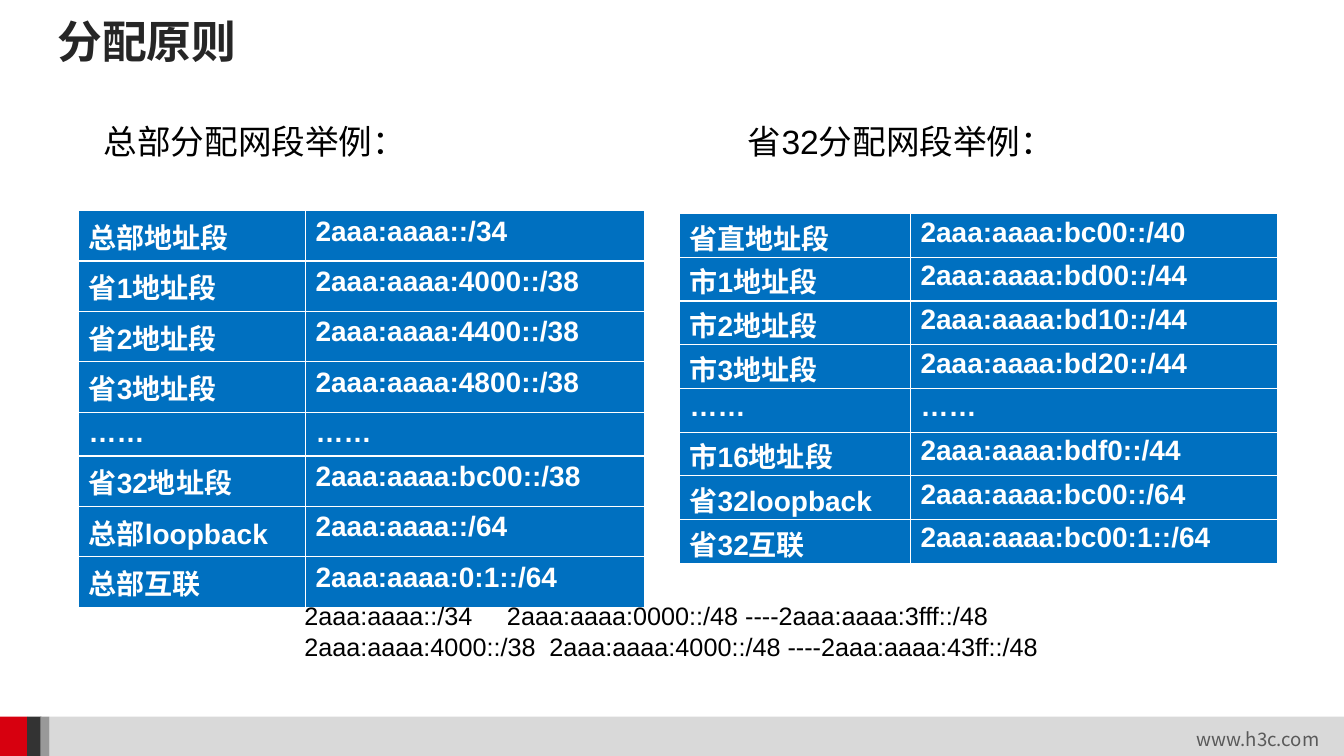
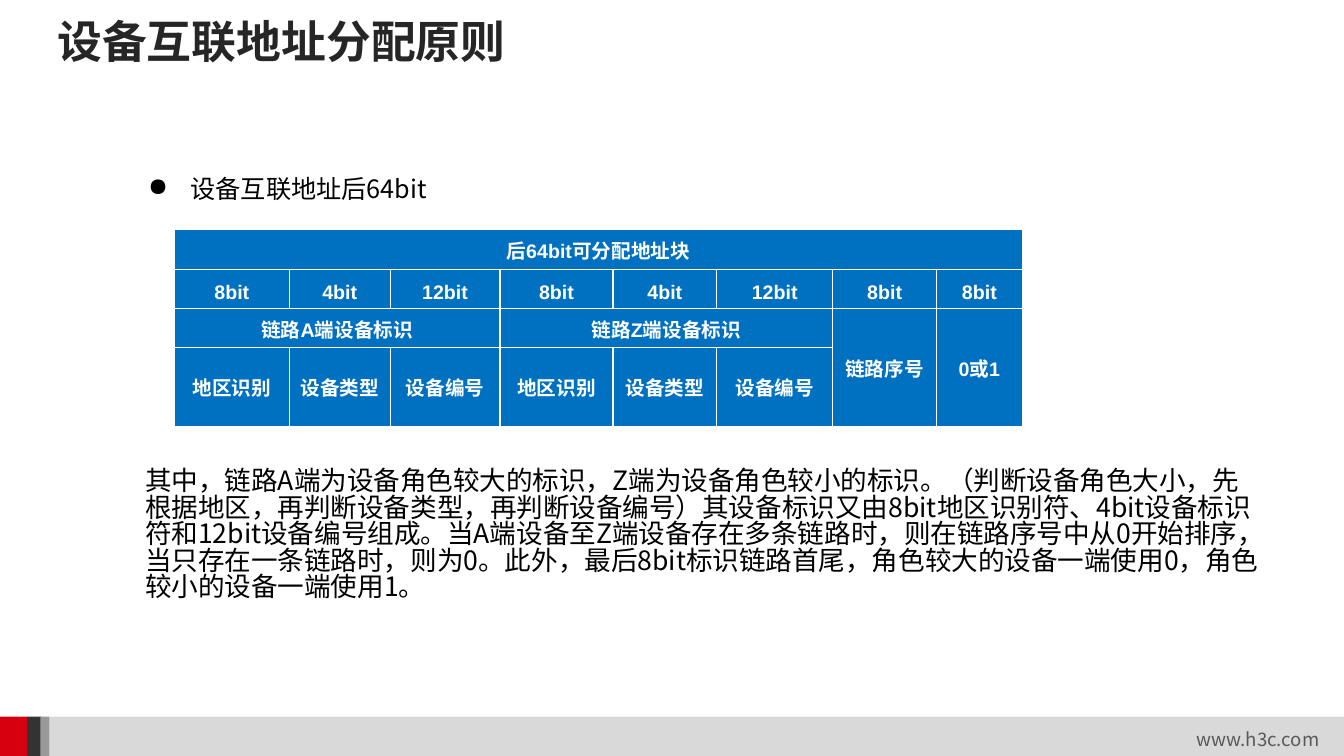
from dataclasses import dataclass

from lxml import etree
from pptx import Presentation
from pptx.dml.color import RGBColor
from pptx.enum import shapes, text
from pptx.oxml import ns
from pptx.util import Inches, Pt


@dataclass(frozen=True)
class Theme:
    latin: str = "Arial"
    cjk: str = "Noto Sans CJK SC"
    ink: str = "000000"
    heading: str = "262626"
    white: str = "FFFFFF"
    table: str = "0070C0"
    footer: str = "595959"
    title_size: float = 32
    subtitle_size: float = 24
    address_size: float = 20
    body_size: float = 19
    note_size: float = 18
    bits_size: float = 14
    footer_size: float = 13.3


THEME = Theme()
FOOTER_BANDS = [
    (0.49, 12.84, "D9D9D9"),
    (0, 0.27, "D7000F"),
    (0.27, 0.14, "333333"),
    (0.4, 0.09, "999999"),
]
HEADQUARTERS = [
    ("总部地址段", "2aaa:aaaa::/34"),
    ("省1地址段", "2aaa:aaaa:4000::/38"),
    ("省2地址段", "2aaa:aaaa:4400::/38"),
    ("省3地址段", "2aaa:aaaa:4800::/38"),
    ("……", "……"),
    ("省32地址段", "2aaa:aaaa:bc00::/38"),
    ("总部loopback", "2aaa:aaaa::/64"),
    ("总部互联", "2aaa:aaaa:0:1::/64"),
]
PROVINCE = [
    ("省直地址段", "2aaa:aaaa:bc00::/40"),
    ("市1地址段", "2aaa:aaaa:bd00::/44"),
    ("市2地址段", "2aaa:aaaa:bd10::/44"),
    ("市3地址段", "2aaa:aaaa:bd20::/44"),
    ("……", "……"),
    ("市16地址段", "2aaa:aaaa:bdf0::/44"),
    ("省32loopback", "2aaa:aaaa:bc00::/64"),
    ("省32互联", "2aaa:aaaa:bc00:1::/64"),
]
RANGES = [
    ("2aaa:aaaa::/34", "2aaa:aaaa:0000::/48 ----2aaa:aaaa:3fff::/48", 2.01),
    ("2aaa:aaaa:4000::/38", "2aaa:aaaa:4000::/48 ----2aaa:aaaa:43ff::/48", 2.43),
]
DEVICE_BITS = ["8bit", "4bit", "12bit"]
DEVICE_FIELDS = ["地区识别", "设备类型", "设备编号"]
INTERFACE_BITS = [
    ["后64bit可分配地址块"] + [""] * 7,
    DEVICE_BITS * 2 + ["8bit", "8bit"],
    ["链路A端设备标识", "", "", "链路Z端设备标识", "", "", "链路序号", "0或1"],
    DEVICE_FIELDS * 2 + ["", ""],
]
INTERFACE_SPANS = [(0, 0, 0, 7), (2, 0, 2, 2), (2, 3, 2, 5), (2, 6, 3, 6), (2, 7, 3, 7)]
EXPLANATION = (
    "其中，链路A端为设备角色较大的标识，Z端为设备角色较小的标识。"
    "（判断设备角色大小，先根据地区，再判断设备类型，再判断设备编号）"
    "其设备标识又由8bit地区识别符、4bit设备标识符和12bit设备编号组成。"
    "当A端设备至Z端设备存在多条链路时，则在链路序号中从0开始排序，"
    "当只存在一条链路时，则为0。此外，最后8bit标识链路首尾，"
    "角色较大的设备一端使用0，角色较小的设备一端使用1。"
)


def style(paragraph, size, color=THEME.ink, face=THEME.cjk, bold=False):
    font = paragraph.font
    font.size = Pt(size)
    font.bold = bold
    font.color.rgb = RGBColor.from_string(color)
    font.name = face
    etree.SubElement(font._rPr, ns.qn("a:ea"), typeface=THEME.cjk)


def add_frame(slide, left, top, width, height, inset=(0.1, 0.05), middle=False):
    box = slide.shapes.add_textbox(Inches(left), Inches(top), Inches(width), Inches(height))
    frame = box.text_frame
    frame.word_wrap = True
    frame.margin_left = frame.margin_right = Inches(inset[0])
    frame.margin_top = frame.margin_bottom = Inches(inset[1])
    if middle:
        frame.vertical_anchor = text.MSO_ANCHOR.MIDDLE
    return frame


def add_label(slide, words, position, size, middle=False, **look):
    paragraph = add_frame(slide, *position, middle=middle).paragraphs[0]
    paragraph.text = words
    style(paragraph, size, **look)


def add_titled_slide(deck, title):
    slide = deck.slides.add_slide(deck.slide_layouts[6])
    for left, width, color in FOOTER_BANDS:
        band = slide.shapes.add_shape(
            shapes.MSO_SHAPE.RECTANGLE, Inches(left), Inches(7.11), Inches(width), Inches(0.4)
        )
        band.shadow.inherit = False
        band.fill.solid()
        band.fill.fore_color.rgb = RGBColor.from_string(color)
        band.line.fill.background()
    add_label(slide, "www.h3c.com", (11.77, 7.17, 1.5, 0.33), THEME.footer_size,
              middle=True, color=THEME.footer)
    add_label(slide, title, (0.47, 0.07, 11.16, 0.67), THEME.title_size,
              middle=True, color=THEME.heading, bold=True)
    return slide


def add_grid(slide, left, top, widths, heights, rows, size):
    grid = slide.shapes.add_table(
        len(heights), len(widths), Inches(left), Inches(top),
        Inches(sum(widths)), Inches(sum(heights)),
    ).table
    grid.horz_banding = False
    for column, width in zip(grid.columns, widths):
        column.width = Inches(width)
    for row, height, values in zip(grid.rows, heights, rows):
        row.height = Inches(height)
        for cell, value in zip(row.cells, values):
            cell.fill.solid()
            cell.fill.fore_color.rgb = RGBColor.from_string(THEME.table)
            cell.text = value
            style(cell.text_frame.paragraphs[0], size, THEME.white, THEME.latin, True)
    return grid


def add_ranges(slide):
    frame = add_frame(slide, 2.92, 5.9, 7.62, 0.71)
    for index, (prefix, span, stop) in enumerate(RANGES):
        paragraph = frame.add_paragraph() if index else frame.paragraphs[0]
        paragraph.text = f"{prefix}\t{span}"
        paragraph.line_spacing = Pt(22)
        stops = etree.SubElement(paragraph._p.get_or_add_pPr(), ns.qn("a:tabLst"))
        etree.SubElement(stops, ns.qn("a:tab"), pos=str(Inches(stop)), algn="l")
        style(paragraph, THEME.note_size, face=THEME.latin)


def add_bullet(slide, words):
    frame = add_frame(slide, 0.68, 1.62, 11.76, 0.5, (0.13, 0.07), True)
    paragraph = frame.paragraphs[0]
    paragraph.text = words
    properties = paragraph._p.get_or_add_pPr()
    properties.set("marL", str(Inches(1.08)))
    properties.set("indent", str(Inches(-0.42)))
    etree.SubElement(properties, ns.qn("a:buChar"), char="●")
    style(paragraph, THEME.note_size)


def add_interface_grid(slide):
    grid = add_grid(slide, 1.73, 2.28, [1.14, 1, 1.09, 1.12, 1.03, 1.15, 1.03, 0.85],
                    [0.39, 0.39, 0.39, 0.78], INTERFACE_BITS, THEME.bits_size)
    for cell in grid.iter_cells():
        cell.vertical_anchor = text.MSO_ANCHOR.MIDDLE
        cell.margin_top = cell.margin_bottom = 0
        paragraph = cell.text_frame.paragraphs[0]
        paragraph.alignment = text.PP_ALIGN.CENTER
        paragraph.line_spacing = Pt(21)
    for top, left, bottom, right in INTERFACE_SPANS:
        grid.cell(top, left).merge(grid.cell(bottom, right))


def add_explanation(slide):
    paragraph = add_frame(slide, 1.31, 4.59, 11.34, 1.73, (0.13, 0.07)).paragraphs[0]
    paragraph.text = EXPLANATION
    paragraph.line_spacing = 0.83
    style(paragraph, THEME.body_size)


def build_segments(deck):
    slide = add_titled_slide(deck, "分配原则")
    for words, left in [("总部分配网段举例：", 0.93), ("省32分配网段举例：", 7.32)]:
        add_label(slide, words, (left, 1.15, 3.6, 0.5), THEME.subtitle_size, face=THEME.latin)
    heights = [0.42 if name == "……" else 0.5 for name, _ in HEADQUARTERS]
    add_grid(slide, 0.78, 2.09, [2.25, 3.36], heights, HEADQUARTERS, THEME.address_size)
    province = add_grid(slide, 6.74, 2.12, [2.29, 3.64], [3.47 / len(PROVINCE)] * len(PROVINCE),
                        PROVINCE, THEME.address_size)
    for cell in province.iter_cells():
        cell.margin_top = Inches(0.03)
        cell.margin_bottom = 0
    add_ranges(slide)


def build_interconnect(deck):
    slide = add_titled_slide(deck, "设备互联地址分配原则")
    add_bullet(slide, "设备互联地址后64bit")
    add_interface_grid(slide)
    add_explanation(slide)


def main():
    deck = Presentation()
    deck.slide_width = Inches(13.33)
    deck.slide_height = Inches(7.5)
    build_segments(deck)
    build_interconnect(deck)
    deck.save("out.pptx")


if __name__ == "__main__":
    main()
